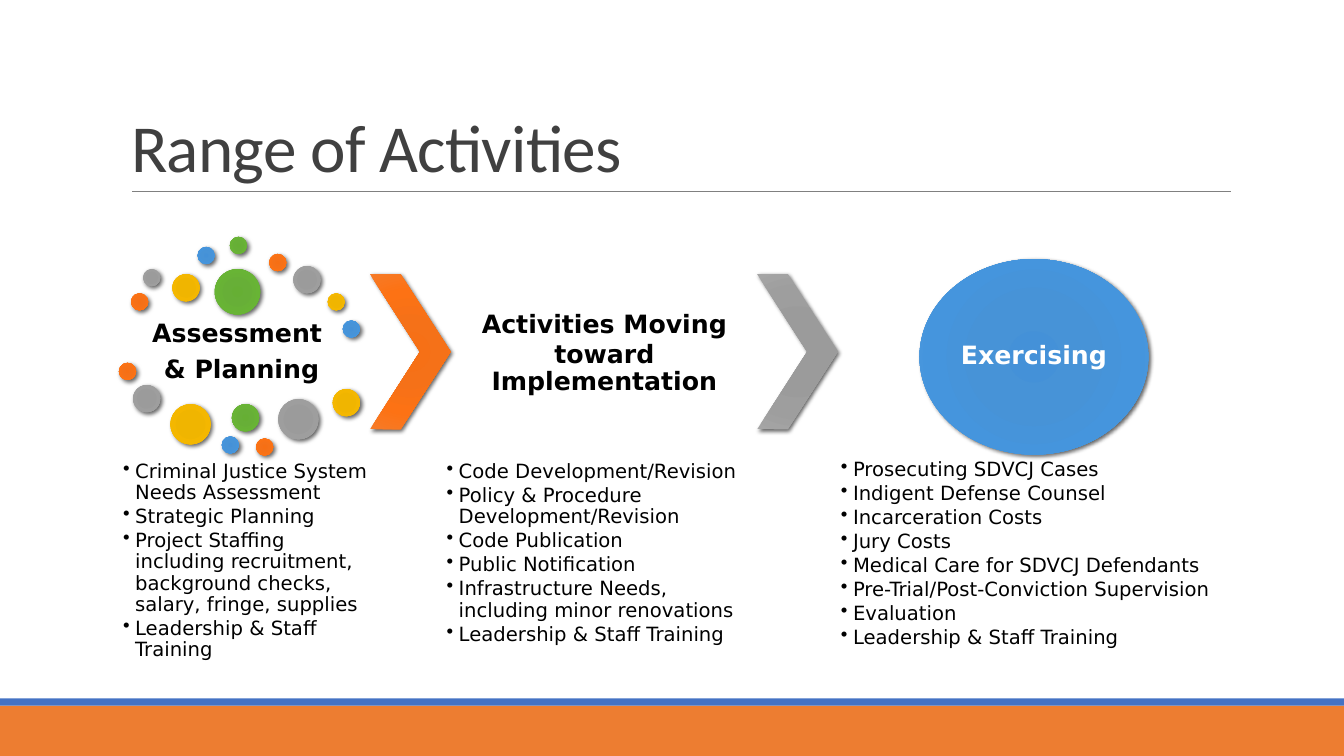
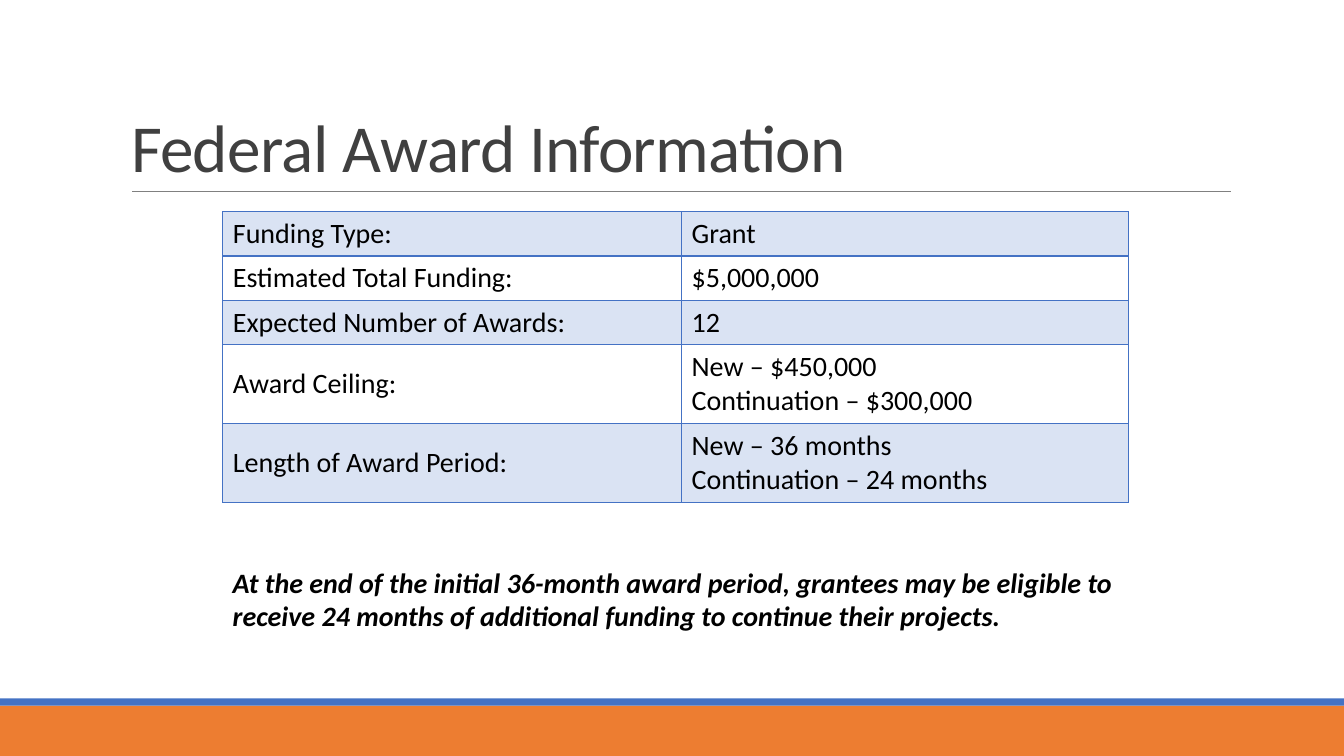
from lxml import etree
from pptx import Presentation
from pptx.dml.color import RGBColor
from pptx.enum.shapes import MSO_CONNECTOR, MSO_SHAPE
from pptx.enum.text import MSO_ANCHOR, PP_ALIGN
from pptx.oxml import parse_xml
from pptx.oxml.ns import nsdecls, qn
from pptx.util import Inches, Pt

RECT, OVAL, CHEVRON = MSO_SHAPE.RECTANGLE, MSO_SHAPE.OVAL, MSO_SHAPE.CHEVRON
TOP, MIDDLE, BOTTOM = MSO_ANCHOR.TOP, MSO_ANCHOR.MIDDLE, MSO_ANCHOR.BOTTOM
LEFT, CENTER = PP_ALIGN.LEFT, PP_ALIGN.CENTER

COLORS = {
    "title": "404040", "text": "000000", "white": "FFFFFF", "rule": "808080",
    "band": "ED7D31", "accent": "4472C4", "row": "DAE3F3",
}
# Radial gradients, stops at STOPS percent
STOPS = (0, 34, 70, 100)
GRADIENTS = {
    "orange": ("F76F13", "F57118", "FD7214", "F67B28"),
    "gray": ("9A9A9A", "9B9B9B", "9E9E9E", "A5A5A5"),
    "gold": ("EEB300", "F0B500", "F4B700", "FFC000"),
    "blue": ("4491D8", "4793D7", "4595DD", "559BDB"),
    "green": ("66AF34", "67AF37", "68B435", "6FB242"),
}
HEAD_FONT, BODY_FONT = "Calibri", "DejaVu Sans"

# Dots around the first stage: left, top, size; the colours cycle
SMALL, MEDIUM, LARGE, LARGEST = 0.17, 0.27, 0.4, 0.45
DOT_COLORS = ("orange", "gray", "gold", "blue", "green")
DOTS = [
    (1.3, 2.91, SMALL), (1.42, 2.67, SMALL), (1.71, 2.72, MEDIUM),
    (1.96, 2.45, SMALL), (2.28, 2.35, SMALL), (2.67, 2.52, SMALL),
    (2.91, 2.64, MEDIUM), (3.25, 2.91, SMALL), (3.4, 3.18, SMALL),
    (2.13, 2.67, LARGEST), (1.18, 3.6, SMALL), (1.32, 3.82, MEDIUM),
    (1.69, 4.01, LARGE), (2.2, 4.33, SMALL), (2.3, 4.01, MEDIUM),
    (2.54, 4.35, SMALL), (2.76, 3.96, LARGE), (3.3, 3.86, MEDIUM),
]
CHEVRONS = [(3.67, "orange"), (7.51, "gray")]

# Stage headings: box, then (text, line spacing) per paragraph
HEADINGS = [
    ((1.3, 2.86, 2.19, 1.27), [("Assessment ", 0.9), ("& Planning", 0.9)]),
    ((4.66, 2.72, 2.67, 1.54),
     [("Activities Moving toward", 1.0), ("Implementation", 0.9)]),
]
LISTS = [
    ((1.2, 4.56, 2.55, 1.94), [
        "Criminal Justice System Needs Assessment",
        "Strategic Planning",
        "Project Staffing including recruitment, background checks, "
        "salary, fringe, supplies",
        "Leadership & Staff Training",
    ]),
    ((4.41, 4.56, 3.03, 1.61), [
        "Code Development/Revision",
        "Policy & Procedure Development/Revision",
        "Code Publication",
        "Public Notification",
        "Infrastructure Needs, including minor renovations",
        "Leadership & Staff Training",
    ]),
    ((8.32, 4.54, 3.88, 1.87), [
        "Prosecuting SDVCJ Cases",
        "Indigent Defense Counsel",
        "Incarceration Costs",
        "Jury Costs",
        "Medical Care for SDVCJ Defendants",
        "Pre-Trial/Post-Conviction Supervision",
        "Evaluation",
        "Leadership & Staff Training",
    ]),
]

AWARD_ROWS = [
    ("Funding Type:", ["Grant"]),
    ("Estimated Total Funding:", ["$5,000,000"]),
    ("Expected Number of Awards:", ["12"]),
    ("Award Ceiling:", ["New – $450,000", "Continuation – $300,000"]),
    ("Length of Award Period:", ["New – 36 months", "Continuation – 24 months"]),
]
AWARD_COLS = (4.55, 4.43)
AWARD_NOTE = ("At the end of the initial 36-month award period, grantees may be "
              "eligible to receive 24 months of additional funding to continue "
              "their projects.")


def rgb(name):
    return RGBColor.from_string(COLORS[name])


def inches(box):
    return [Inches(v) for v in box]


def setup_frame(tf, anchor, inset):
    tf.word_wrap = True
    tf.vertical_anchor = anchor
    tf.margin_left = tf.margin_right = Inches(inset)
    tf.margin_top = tf.margin_bottom = Inches(inset)


def add_text(slide, box, anchor, inset):
    tf = slide.shapes.add_textbox(*inches(box)).text_frame
    setup_frame(tf, anchor, inset)
    return tf


def add_paragraph(tf, i, text, size, font=BODY_FONT, color="text", bold=False,
                  italic=False, align=LEFT, spacing=1.0, after=0):
    """Write paragraph i of a frame, using the existing first one for i = 0."""
    p = tf.paragraphs[0] if i == 0 else tf.add_paragraph()
    p.alignment = align
    p.line_spacing = spacing
    p.space_after = Pt(after)
    r = p.add_run()
    r.text = text
    r.font.name, r.font.size = font, Pt(size)
    r.font.bold, r.font.italic = bold, italic
    r.font.color.rgb = rgb(color)
    return p


def add_glossy(slide, kind, box, gradient):
    """Add a shape with a radial gradient and a soft shadow."""
    sp = slide.shapes.add_shape(kind, *inches(box))
    sp.line.fill.background()
    sp.shadow.inherit = False
    stops = "".join(f'<a:gs pos="{pos * 1000}"><a:srgbClr val="{color}"/></a:gs>'
                    for pos, color in zip(STOPS, GRADIENTS[gradient]))
    fill = parse_xml(
        f'<a:gradFill {nsdecls("a")} rotWithShape="1"><a:gsLst>{stops}</a:gsLst>'
        '<a:path path="circle"><a:fillToRect l="100000" t="100000" '
        'r="100000" b="100000"/></a:path></a:gradFill>')
    shadow = parse_xml(
        f'<a:outerShdw {nsdecls("a")} blurRad="{Pt(3)}" dist="{Pt(2)}" '
        'dir="2700000" rotWithShape="0"><a:srgbClr val="000000">'
        '<a:alpha val="60000"/></a:srgbClr></a:outerShdw>')
    props = sp._element.spPr
    props.find(qn("a:ln")).addprevious(fill)
    props.find(qn("a:effectLst")).append(shadow)
    return sp


def add_titled_slide(prs, title):
    """Add a slide with the shared bands, rule and title."""
    slide = prs.slides.add_slide(prs.slide_layouts[5])
    for top, height, color in ((7, 0.5, "band"), (6.93, 0.07, "accent")):
        sp = slide.shapes.add_shape(RECT, 0, Inches(top), prs.slide_width,
                                    Inches(height))
        sp.shadow.inherit = False
        sp.fill.solid()
        sp.fill.fore_color.rgb = rgb(color)
        sp.line.fill.background()
    rule = slide.shapes.add_connector(MSO_CONNECTOR.STRAIGHT,
                                      *inches((1.31, 1.9, 12.21, 1.9)))
    rule.line.color.rgb = rgb("rule")
    rule.line.width = Pt(0.5)
    etree.SubElement(rule._element.spPr, qn("a:effectLst"))

    sp = slide.shapes.title
    sp.left, sp.top, sp.width, sp.height = inches((1.2, 0.31, 11, 1.59))
    tf = sp.text_frame
    setup_frame(tf, BOTTOM, 0.1)
    tf.margin_top = tf.margin_bottom = Inches(0.05)
    p = add_paragraph(tf, 0, title, 48, HEAD_FONT, "title", spacing=0.85)
    p.runs[0].font._element.set("spc", "-50")
    return slide


def add_bullets(slide, box, items):
    tf = add_text(slide, box, TOP, 0.02)
    for i, item in enumerate(items):
        p = add_paragraph(tf, i, item, 14, spacing=0.9, after=2)
        pr = p._p.get_or_add_pPr()
        pr.set("marL", str(Inches(0.12)))
        pr.set("indent", str(-Inches(0.12)))
        etree.SubElement(pr, qn("a:buChar")).set("char", "•")


def set_borders(cell):
    pr = cell._tc.get_or_add_tcPr()
    for i, side in enumerate(("lnL", "lnR", "lnT", "lnB")):
        pr.insert(i, parse_xml(
            f'<a:{side} {nsdecls("a")} w="{Pt(1)}"><a:solidFill>'
            f'<a:srgbClr val="{COLORS["accent"]}"/></a:solidFill></a:{side}>'))


def add_award_table(slide):
    heights = [0.44 if len(values) == 1 else 0.78 for _, values in AWARD_ROWS]
    box = (2.21, 2.1, sum(AWARD_COLS), sum(heights))
    table = slide.shapes.add_table(len(AWARD_ROWS), len(AWARD_COLS),
                                   *inches(box)).table
    table.first_row = table.horz_banding = False
    for col, width in zip(table.columns, AWARD_COLS):
        col.width = Inches(width)
    for n, (label, values) in enumerate(AWARD_ROWS):
        table.rows[n].height = Inches(heights[n])
        for cell, lines in zip(table.rows[n].cells, ([label], values)):
            cell.vertical_anchor = MIDDLE
            if n % 2 == 0:
                cell.fill.solid()
                cell.fill.fore_color.rgb = rgb("row")
            else:
                cell.fill.background()
            set_borders(cell)
            for i, line in enumerate(lines):
                add_paragraph(cell.text_frame, i, line, 20, HEAD_FONT)


def build_activities(prs):
    slide = add_titled_slide(prs, "Range of Activities")
    for i, (left, top, size) in enumerate(DOTS):
        add_glossy(slide, OVAL, (left, top, size, size),
                   DOT_COLORS[i % len(DOT_COLORS)])
    for left, color in CHEVRONS:
        sp = add_glossy(slide, CHEVRON, (left, 2.72, 0.8, 1.54), color)
        sp.adjustments[0] = 0.62
    for box, lines in HEADINGS:
        tf = add_text(slide, box, MIDDLE, 0.03)
        for i, (text, spacing) in enumerate(lines):
            add_paragraph(tf, i, text, 18, bold=True, align=CENTER,
                          spacing=spacing, after=6 if spacing < 1 else 0)
    tf = add_glossy(slide, OVAL, (9.12, 2.57, 2.27, 1.94), "blue").text_frame
    setup_frame(tf, MIDDLE, 0)
    add_paragraph(tf, 0, "Exercising", 18, color="white", bold=True,
                  align=CENTER, spacing=0.9)
    for box, items in LISTS:
        add_bullets(slide, box, items)


def build_award(prs):
    slide = add_titled_slide(prs, "Federal Award Information")
    add_award_table(slide)
    tf = add_text(slide, (2.21, 5.56, 8.97, 0.77), TOP, 0.1)
    tf.margin_top = tf.margin_bottom = Inches(0.05)
    add_paragraph(tf, 0, AWARD_NOTE, 20, HEAD_FONT, bold=True, italic=True)


def main():
    prs = Presentation()
    prs.slide_width, prs.slide_height = Inches(13.33), Inches(7.5)
    build_activities(prs)
    build_award(prs)
    prs.save("out.pptx")


if __name__ == "__main__":
    main()
